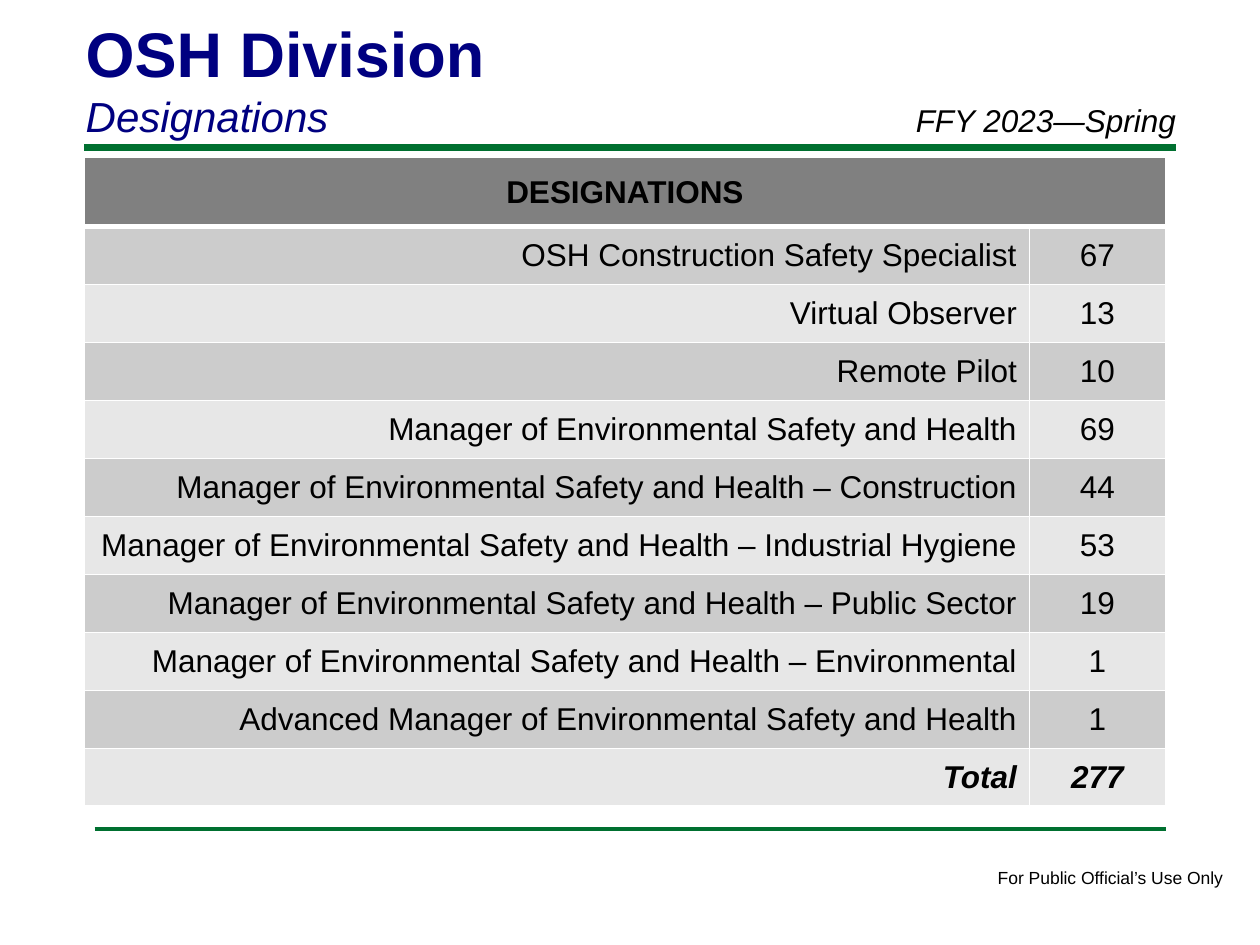
"""Build the OSH Division designations slide."""
import pptx
import pptx.dml.color
import pptx.enum.shapes
import pptx.enum.text
import pptx.oxml
import pptx.oxml.ns
import pptx.util
from lxml import etree

Inches = pptx.util.Inches
Pt = pptx.util.Pt
RGBColor = pptx.dml.color.RGBColor
Align = pptx.enum.text.PP_ALIGN
Anchor = pptx.enum.text.MSO_ANCHOR

GREEN = RGBColor(0x00, 0x70, 0x30)
NAVY = RGBColor(0x00, 0x00, 0x80)
BLACK = RGBColor(0x00, 0x00, 0x00)
WHITE = RGBColor(0xFF, 0xFF, 0xFF)
HEADER_FILL = RGBColor(0x80, 0x80, 0x80)
BAND_FILLS = (RGBColor(0xCC, 0xCC, 0xCC), RGBColor(0xE7, 0xE7, 0xE7))

MANAGER = "Manager of Environmental Safety and Health"
DESIGNATIONS = [
    ("OSH Construction Safety Specialist", 67),
    ("Virtual Observer", 13),
    ("Remote Pilot", 10),
    (MANAGER, 69),
    (f"{MANAGER} – Construction", 44),
    (f"{MANAGER} – Industrial Hygiene", 53),
    (f"{MANAGER} – Public Sector", 19),
    (f"{MANAGER} – Environmental", 1),
    (f"Advanced {MANAGER}", 1),
]


def add_run(paragraph, text, size, color=BLACK, bold=False, italic=False):
    run = paragraph.add_run()
    run.text = text
    font = run.font
    font.name = "Arial"
    font.size = Pt(size)
    font.bold = bold
    font.italic = italic
    font.color.rgb = color


def add_rule(slide, left, right, top, weight):
    line = slide.shapes.add_connector(
        pptx.enum.shapes.MSO_CONNECTOR.STRAIGHT,
        Inches(left), Inches(top), Inches(right), Inches(top))
    line.line.color.rgb = GREEN
    line.line.width = Pt(weight)
    etree.SubElement(line._element.spPr, pptx.oxml.ns.qn("a:effectLst"))


def add_label(slide, box, text, size, italic=False, wrap=True):
    shape = slide.shapes.add_textbox(*map(Inches, box))
    shape.text_frame.word_wrap = wrap
    add_run(shape.text_frame.paragraphs[0], text, size, italic=italic)


def fill_title(slide):
    title = slide.shapes.title
    title.left, title.top = Inches(0.58), Inches(0.06)
    title.width, title.height = Inches(8.25), Inches(1.11)
    frame = title.text_frame
    frame.auto_size = pptx.enum.text.MSO_AUTO_SIZE.NONE
    frame.vertical_anchor = Anchor.MIDDLE
    heading, subtitle = frame.paragraphs[0], frame.add_paragraph()
    heading.alignment = subtitle.alignment = Align.LEFT
    add_run(heading, "OSH Division", 36, NAVY, bold=True)
    add_run(subtitle, "Designations", 24, NAVY, italic=True)


def set_borders(cell, top=1, bottom=1):
    properties = cell._tc.get_or_add_tcPr()
    for side, weight in (("L", 1), ("R", 1), ("T", top), ("B", bottom)):
        properties.append(pptx.oxml.parse_xml(
            f'<a:ln{side} {pptx.oxml.ns.nsdecls("a")} w="{Pt(weight)}">'
            f'<a:solidFill><a:srgbClr val="{WHITE}"/></a:solidFill></a:ln{side}>'))


def fill_cell(cell, text, alignment, color, top=1, bottom=1, **style):
    set_borders(cell, top, bottom)
    cell.fill.solid()
    cell.fill.fore_color.rgb = color
    cell.vertical_anchor = Anchor.MIDDLE
    paragraph = cell.text_frame.paragraphs[0]
    paragraph.alignment = alignment
    if text:
        add_run(paragraph, text, 18, **style)


def add_designations(slide):
    total = sum(count for name, count in DESIGNATIONS)
    rows = DESIGNATIONS + [("Total", total)]
    table = slide.shapes.add_table(
        len(rows) + 1, 2, Inches(0.67), Inches(1.25), Inches(8.58), Inches(5.17)).table
    table.columns[0].width, table.columns[1].width = Inches(7.5), Inches(1.08)
    for row in table.rows:
        row.height = Inches(0.46)
    table.rows[0].height = Inches(0.55)
    table.cell(0, 0).merge(table.cell(0, 1))
    for column, heading in enumerate(("DESIGNATIONS", "")):
        fill_cell(table.cell(0, column), heading, Align.CENTER, HEADER_FILL,
                  bottom=3, bold=True)
    for index, (name, count) in enumerate(rows, start=1):
        is_total = index == len(rows)
        for column, text, alignment in ((0, name, Align.RIGHT), (1, str(count), Align.CENTER)):
            fill_cell(table.cell(index, column), text, alignment,
                      BAND_FILLS[(index - 1) % 2], top=3 if index == 1 else 1,
                      bold=is_total, italic=is_total)


def main():
    presentation = pptx.Presentation()
    presentation.slide_width, presentation.slide_height = Inches(10), Inches(7.5)
    slide = presentation.slides.add_slide(presentation.slide_layouts[5])
    add_rule(slide, 0.67, 9.33, 1.17, 4)
    add_rule(slide, 0.75, 9.25, 6.58, 2)
    add_label(slide, (7.82, 6.83, 2.01, 0.27), "For Public Official’s Use Only", 10, wrap=False)
    fill_title(slide)
    add_designations(slide)
    add_label(slide, (7.17, 0.75, 2.5, 0.4), "FFY 2023—Spring", 18, italic=True)
    presentation.save("out.pptx")


if __name__ == "__main__":
    main()
